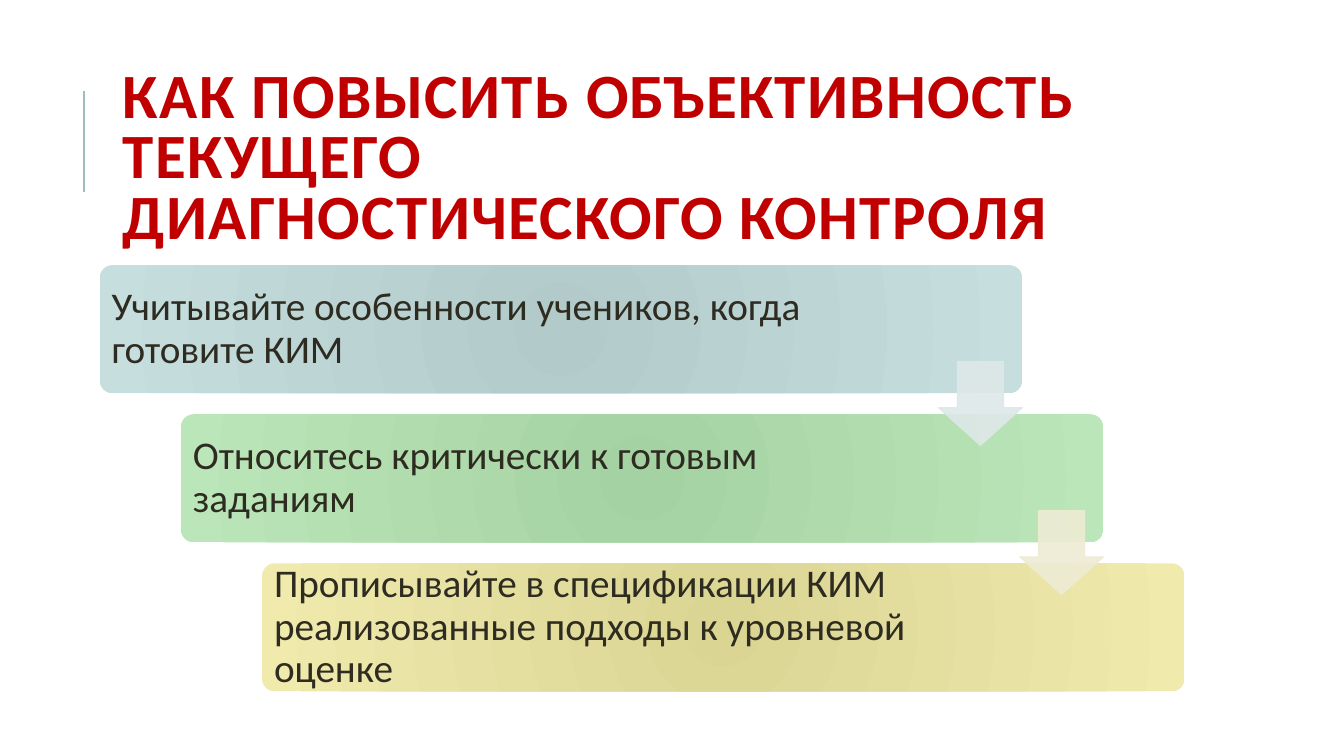
from dataclasses import dataclass
from typing import Any

from lxml.etree import SubElement
from pptx import Presentation
from pptx.dml.color import RGBColor
from pptx.enum.shapes import MSO_CONNECTOR, MSO_SHAPE
from pptx.enum.text import MSO_ANCHOR
from pptx.oxml.ns import qn
from pptx.util import Pt

STEP_X, STEP_Y = 58, 106.5
CARD_X, CARD_Y, CARD_W, CARD_H = 71.2, 189.4, 659, 91.5
ARROW_X, ARROW_Y, ARROW_SIZE = 670.3, 258.2, 60


@dataclass
class Card:
    text: str
    width: float
    inner: str
    outer: str


@dataclass
class Arrow:
    fill: str


CARDS = [
    Card("Учитывайте особенности учеников, когда готовите КИМ", 565, "B2CBCA", "C6DEDE"),
    Card("Относитесь критически к готовым заданиям", 541.5, "A5D2A3", "BBE6B9"),
    Card("Прописывайте в спецификации КИМ реализованные подходы к уровневой оценке",
         541.5, "DBD594", "F0EAAD"),
]
ARROWS = [Arrow("DEE8E8"), Arrow("EEECD4")]

TITLE = "КАК ПОВЫСИТЬ ОБЪЕКТИВНОСТЬ ТЕКУЩЕГО\vДИАГНОСТИЧЕСКОГО КОНТРОЛЯ"
TITLE_FONT = {"name": "Calibri", "size": Pt(45), "bold": True}
CARD_FONT = {"name": "Calibri", "size": Pt(28), "bold": False}
CARD_FRAME = {f"margin_{side}": Pt(8.6) for side in ("left", "top", "right", "bottom")}


def paint(color: Any, code: str) -> None:
    color.rgb = RGBColor.from_string(code)


def apply(target: Any, values: dict[str, Any]) -> None:
    for name, value in values.items():
        setattr(target, name, value)


def add_text(slide: Any, box: tuple[float, ...], text: str, font: dict[str, Any],
             color: str, spacing: float, frame: dict[str, Any]) -> Any:
    body = slide.shapes.add_textbox(*map(Pt, box)).text_frame
    apply(body, {"word_wrap": True, "vertical_anchor": MSO_ANCHOR.MIDDLE, **frame})
    para = body.paragraphs[0]
    para.text = text
    para.line_spacing = spacing
    for run in para.runs:
        apply(run.font, font)
        paint(run.font.color, color)
    return para


def add_shape(slide: Any, kind: MSO_SHAPE, box: tuple[float, ...],
              adjust: tuple[float, ...]) -> Any:
    shape = slide.shapes.add_shape(kind, *map(Pt, box))
    shape.shadow.inherit = False
    for index, value in enumerate(adjust):
        shape.adjustments[index] = value
    return shape


def add_card(slide: Any, card: Card, index: int) -> None:
    left, top = CARD_X + index * STEP_X, CARD_Y + index * STEP_Y
    shape = add_shape(slide, MSO_SHAPE.ROUNDED_RECTANGLE, (left, top, CARD_W, CARD_H), (0.1,))
    shape.line.fill.background()
    shape.fill.gradient()
    for stop, code in zip(shape.fill.gradient_stops, (card.inner, card.outer)):
        paint(stop.color, code)
    grad = shape.element.spPr.find(qn("a:gradFill"))
    grad.remove(grad.find(qn("a:lin")))
    round_path = SubElement(grad, qn("a:path"), {"path": "circle"})
    SubElement(round_path, qn("a:fillToRect"), dict.fromkeys("ltrb", "100000"))
    add_text(slide, (left, top, card.width, CARD_H), card.text,
             CARD_FONT, "2E2B21", 0.9, CARD_FRAME)


def add_arrow(slide: Any, arrow: Arrow, index: int) -> None:
    box = (ARROW_X + index * STEP_X, ARROW_Y + index * STEP_Y, ARROW_SIZE, ARROW_SIZE)
    shape = add_shape(slide, MSO_SHAPE.DOWN_ARROW, box, (0.55, 0.45))
    shape.line.width = Pt(0.75)
    for fill in (shape.fill, shape.line.fill):
        fill.solid()
        paint(fill.fore_color, arrow.fill)
    for color in shape.element.spPr.iter(qn("a:srgbClr")):
        SubElement(color, qn("a:alpha"), {"val": "90000"})


def add_rule(slide: Any) -> None:
    rule = slide.shapes.add_connector(MSO_CONNECTOR.STRAIGHT, *map(Pt, (60, 136.8, 60, 64.8)))
    rule.line.width = Pt(1.5)
    paint(rule.line.color, "9CBEBD")
    SubElement(rule._element.spPr, qn("a:effectLst"))


def main() -> None:
    deck = Presentation()
    apply(deck, {"slide_width": Pt(960), "slide_height": Pt(540)})
    slide = deck.slides.add_slide(deck.slide_layouts[6])
    add_rule(slide)
    title = add_text(slide, (80.6, 46, 765.4, 137.5), TITLE, TITLE_FONT, "C00000", 0.8, {})
    for run in title.runs:
        run.font._element.set("spc", "100")
    for index, card in enumerate(CARDS):
        add_card(slide, card, index)
    for index, arrow in enumerate(ARROWS):
        add_arrow(slide, arrow, index)
    deck.save("out.pptx")


if __name__ == "__main__":
    main()
